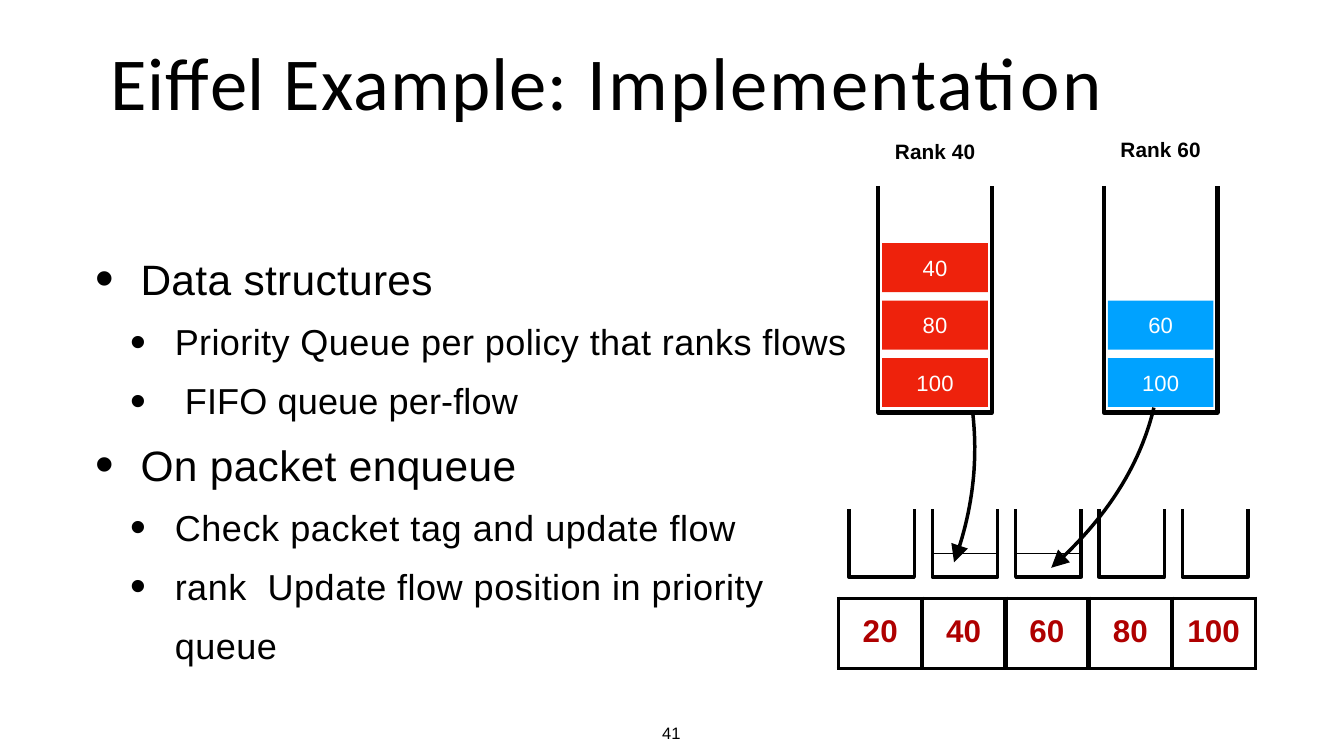
from lxml.etree import SubElement
from pptx import Presentation
from pptx.dml.color import RGBColor
from pptx.enum.shapes import MSO_CONNECTOR, MSO_SHAPE
from pptx.enum.text import MSO_ANCHOR as Anchor, PP_ALIGN as Align
from pptx.oxml.ns import qn
from pptx.util import Inches, Pt

BLACK = RGBColor(0x00, 0x00, 0x00)
WHITE = RGBColor(0xFF, 0xFF, 0xFF)
RED = RGBColor(0xEE, 0x22, 0x0C)
BLUE = RGBColor(0x00, 0xA2, 0xFF)
DARK_RED = RGBColor(0xAF, 0x00, 0x00)

# Runs are (text, letter spacing in points)
TITLE = [("Eiffel ", 0.9), ("Example: ", 1.4), ("Implementation", 2.5)]
PAGE = "41"
# Bullets are (level, text, letter spacing, space before)
BULLETS = [
    (0, "Data structures", 0.4, 0),
    (1, "Priority Queue per policy that ranks flows", 0.5, 0),
    (1, " FIFO queue per-flow", 0.2, 0),
    (0, "On packet enqueue", 0.4, 10),
    (1, "Check packet tag and update flow", 0.7, 0),
    (1, "rank  Update flow position in priority queue", 0.6, 0),
]
LEVELS = [{"size": 50, "indent": 0.75}, {"size": 42.5, "indent": 1.31}]
HANGING = 0.73
LINE_PITCH = 69.5

# Flow queues: label, label top, left edge, colour, packets from the bottom up
FLOWS = [
    ("Rank 40", 2.26, 14.37, RED, ["100", "80", "40"]),
    ("Rank 60", 2.22, 18.06, BLUE, ["100", "60"]),
]
QUEUE = {"width": 1.86, "top": 3.04, "bottom": 6.75}
PACKET = {"width": 1.73, "height": 0.8, "bottom": 6.66, "pitch": 0.94}

RANKS = ["20", "40", "60", "80", "100"]
OCCUPIED = ["40", "60"]
TABLE = {"left": 13.72, "top": 9.79, "column": 1.364, "height": 1.15}
BIN = {"width": 1.07, "top": 8.33, "bottom": 9.44, "level": 9.06}

# Start, control point and tip of each curved arrow
ARROWS = [
    [(15.92, 6.79), (16.05, 8.0), (15.61, 9.2)],
    [(18.88, 6.67), (18.54, 8.1), (17.2, 9.29)],
]
CURVE_STEPS = 24

presentation = Presentation()
presentation.slide_width, presentation.slide_height = Inches(21.99), Inches(12.37)
slide = presentation.slides.add_slide(presentation.slide_layouts[6])
shapes = slide.shapes


def prepare_frame(frame, anchor):
    values = {"word_wrap": True, "vertical_anchor": anchor, "margin_left": 0,
              "margin_right": 0, "margin_top": 0, "margin_bottom": 0}
    for name, value in values.items():
        setattr(frame, name, value)


def add_run(paragraph, text, size, color=BLACK, bold=False, font="Arial", spacing=0.1):
    run = paragraph.add_run()
    run.text = text
    for name, value in {"name": font, "size": Pt(size), "bold": bold}.items():
        setattr(run.font, name, value)
    run.font.color.rgb = color
    run._r.get_or_add_rPr().set("spc", str(round(spacing * 100)))


def add_box(left, top, width, height, anchor=Anchor.MIDDLE):
    box = shapes.add_textbox(Inches(left), Inches(top), Inches(width), Inches(height))
    prepare_frame(box.text_frame, anchor)
    return box.text_frame


def add_centred(frame, text, size, **style):
    paragraph = frame.paragraphs[0]
    paragraph.alignment = Align.CENTER
    add_run(paragraph, text, size, **style)


def add_outline(points, weight):
    """Draw an open black line through points given in inches."""
    start, *rest = [(Inches(x), Inches(y)) for x, y in points]
    builder = shapes.build_freeform(*start)
    builder.add_line_segments(rest, close=False)
    outline = builder.convert_to_shape()
    outline.shadow.inherit = False
    outline.fill.background()
    outline.line.color.rgb = BLACK
    outline.line.width = Pt(weight)
    return outline


def add_container(left, width, top, bottom, weight):
    """Draw a container that is open at the top."""
    right = left + width
    add_outline([(left, top), (left, bottom), (right, bottom), (right, top)], weight)


def add_bullets():
    frame = add_box(1.55, 4.01, 12.4, 6.9, Anchor.TOP)
    for index, (level, text, spacing, before) in enumerate(BULLETS):
        paragraph = frame.add_paragraph() if index else frame.paragraphs[0]
        paragraph.line_spacing, paragraph.space_before = Pt(LINE_PITCH), Pt(before)
        add_run(paragraph, text, LEVELS[level]["size"], spacing=spacing)
        properties = paragraph._p.get_or_add_pPr()
        properties.set("marL", str(Inches(LEVELS[level]["indent"])))
        properties.set("indent", str(-Inches(HANGING)))
        SubElement(properties, qn("a:buSzPct"), val="125000")
        SubElement(properties, qn("a:buFont"), typeface="Arial")
        SubElement(properties, qn("a:buChar"), char="•")


def add_flow(label, label_top, left, color, packets):
    add_centred(add_box(left, label_top, QUEUE["width"], 0.44), label, 24.5, bold=True)
    add_container(left, weight=4.95, **QUEUE)
    packet_left = left + (QUEUE["width"] - PACKET["width"]) / 2
    for index, number in enumerate(packets):
        top = PACKET["bottom"] - PACKET["height"] - index * PACKET["pitch"]
        packet = shapes.add_shape(MSO_SHAPE.RECTANGLE, Inches(packet_left), Inches(top),
                                  Inches(PACKET["width"]), Inches(PACKET["height"]))
        packet.shadow.inherit = False
        packet.fill.solid()
        packet.fill.fore_color.rgb = color
        packet.line.fill.background()
        prepare_frame(packet.text_frame, Anchor.MIDDLE)
        add_centred(packet.text_frame, number, 26, color=WHITE, spacing=0.2)


def add_bin(column, rank):
    left = TABLE["left"] + column * TABLE["column"] + 0.17
    add_container(left, BIN["width"], BIN["top"], BIN["bottom"], 4.12)
    if rank in OCCUPIED:
        level = Inches(BIN["level"])
        line = shapes.add_connector(MSO_CONNECTOR.STRAIGHT, Inches(left), level,
                                    Inches(left + BIN["width"]), level)
        line.line.color.rgb = BLACK
        line.line.width = Pt(1.65)
        SubElement(line._element.spPr, qn("a:effectLst"))


def add_cell_borders(cell, weights):
    properties = cell._tc.get_or_add_tcPr()
    for index, (side, weight) in enumerate(weights.items()):
        border = properties.makeelement(qn(f"a:{side}"), {"w": str(Pt(weight))})
        fill = SubElement(border, qn("a:solidFill"))
        SubElement(fill, qn("a:srgbClr"), val=str(BLACK))
        properties.insert(index, border)


def add_rank_table():
    width = TABLE["column"] * len(RANKS)
    frame = shapes.add_table(1, len(RANKS), Inches(TABLE["left"]), Inches(TABLE["top"]),
                             Inches(width), Inches(TABLE["height"]))
    table = frame.table
    table.first_row = table.horz_banding = False
    for column, rank in enumerate(RANKS):
        table.columns[column].width = Inches(TABLE["column"])
        cell = table.cell(0, column)
        cell.fill.background()
        for name, value in {"margin_left": 0, "margin_right": 0, "margin_top": 0,
                            "margin_bottom": Inches(0.05),
                            "vertical_anchor": Anchor.MIDDLE}.items():
            setattr(cell, name, value)
        add_centred(cell.text_frame, rank, 37, color=DARK_RED, bold=True)
        add_cell_borders(cell, {"lnL": 6 if column else 4.25,
                                "lnR": 6 if column < len(RANKS) - 1 else 4.25,
                                "lnT": 4.25, "lnB": 4.25})


def add_curved_arrow(start, control, tip):
    """Draw a quadratic curve with an arrowhead at its tip."""
    points = []
    for step in range(CURVE_STEPS + 1):
        t = step / CURVE_STEPS
        points.append([(1 - t) ** 2 * a + 2 * t * (1 - t) * b + t ** 2 * c
                       for a, b, c in zip(start, control, tip)])
    arrow = add_outline(points, 4.12)
    SubElement(arrow.line._get_or_add_ln(), qn("a:tailEnd"),
               type="triangle", w="lg", len="lg")


title = add_box(1.81, 0.58, 18.37, 1.5, Anchor.TOP).paragraphs[0]
for text, spacing in TITLE:
    add_run(title, text, 88, font="Calibri", spacing=spacing)
add_bullets()
for flow in FLOWS:
    add_flow(*flow)
for column, rank in enumerate(RANKS):
    add_bin(column, rank)
add_rank_table()
for arrow_points in ARROWS:
    add_curved_arrow(*arrow_points)
add_centred(add_box(10.82, 11.82, 0.33, 0.35), PAGE, 19.5)

presentation.save("out.pptx")
